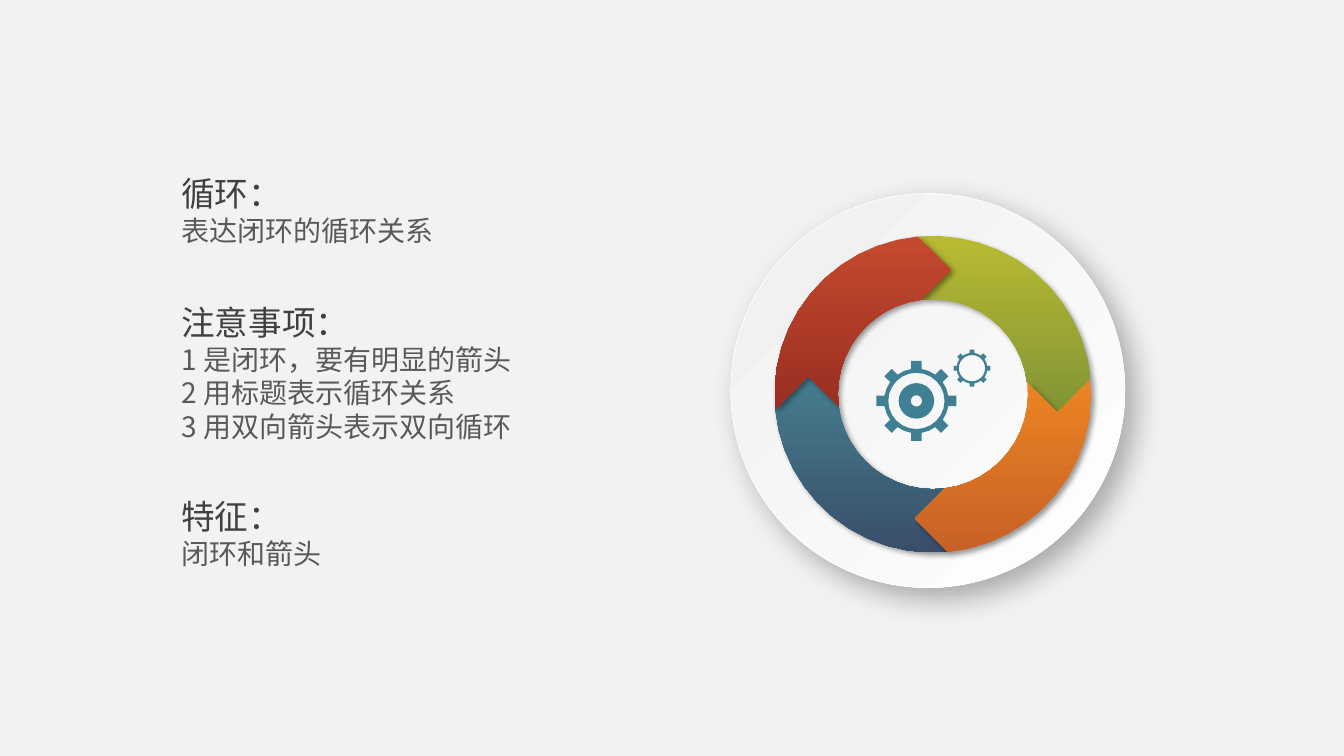
import math
from dataclasses import dataclass
from typing import Optional

import pptx
import pptx.dml.color
import pptx.enum.shapes
import pptx.enum.text
import pptx.oxml
import pptx.oxml.ns
import pptx.util
from lxml import etree

Point = tuple[float, float]


@dataclass(frozen=True)
class Theme:
    font: str = "Noto Sans CJK SC"
    background: str = "F2F2F2"
    heading_color: str = "404040"
    body_color: str = "595959"
    heading_size: float = 24
    body_size: float = 20
    line_ratio: float = 1.2
    gear: str = "3F8094"
    disc: tuple[str, str] = ("EFEFEF", "FFFFFF")
    disc_line: str = "FFFFFF"


@dataclass(frozen=True)
class Shadow:
    opacity: int
    blur: float
    distance: float


@dataclass(frozen=True)
class Note:
    top: float
    width: float
    height: float
    heading: str
    lines: tuple[str, ...]


@dataclass(frozen=True)
class CycleArrow:
    turn: float
    colors: tuple[str, str]


@dataclass(frozen=True)
class Gear:
    center: Point
    tip_radius: float
    rim_radius: float
    hole_radius: float
    half_tooth: float
    hub_radii: tuple[float, ...] = ()


THEME = Theme()
DISC_SHADOW = Shadow(30, 21, 10)
ARROW_SHADOW = Shadow(40, 4, 3)
NOTE_LEFT = 122.4
DISC_BOX = (522, 138.24, 281.52, 281.52)

# Cycle geometry: each radius is paired with the angle where an arrow begins
CYCLE_CENTER = (666.36, 281.52)
OUTER = (113.1, -5.5)
NOTCH = (89.9, 8.3)
INNER = (67.9, -7.2)

NOTES = (
    Note(120.24, 196.56, 60.48, "循环：", ("表达闭环的循环关系",)),
    Note(212.4, 255.6, 133.2, "注意事项：",
         ("1 是闭环，要有明显的箭头", "2 用标题表示循环关系", "3 用双向箭头表示双向循环")),
    Note(351.36, 115.2, 60.48, "特征：", ("闭环和箭头",)),
)
ARROWS = (
    CycleArrow(90, ("457D8E", "394E6B")),
    CycleArrow(270, ("B8BA31", "829436")),
    CycleArrow(0, ("EB8422", "C86126")),
    CycleArrow(180, ("C44A2F", "9A2E22")),
)
GEARS = (
    Gear((654.6, 286.4), 28.8, 23.1, 20.1, 3.7, (12.7, 4)),
    Gear((694.3, 263), 13.3, 11, 9.4, 1.7),
)


def color(value: str) -> pptx.dml.color.RGBColor:
    return pptx.dml.color.RGBColor.from_string(value)


def apply_format(target, values: dict) -> None:
    for name, value in values.items():
        setattr(target, name, value)


def fill_gradient(shape, colors: tuple[str, str], clockwise_angle: float) -> None:
    shape.fill.gradient()
    shape.fill.gradient_angle = 360 - clockwise_angle
    for stop, value in zip(shape.fill.gradient_stops, colors):
        stop.color.rgb = color(value)


def set_shadow(shape, shadow: Optional[Shadow]) -> None:
    shape.shadow.inherit = False
    if shadow is None:
        return
    qn = pptx.oxml.ns.qn
    effects = shape._element.spPr.find(qn("a:effectLst"))
    outer = etree.SubElement(effects, qn("a:outerShdw"), {
        "blurRad": str(pptx.util.Pt(shadow.blur)), "dist": str(pptx.util.Pt(shadow.distance)),
        "dir": str(45 * 60000), "algn": "tl", "rotWithShape": "0"})
    black = etree.SubElement(outer, qn("a:srgbClr"), val="000000")
    etree.SubElement(black, qn("a:alpha"), val=str(shadow.opacity * 1000))


def polar(center: Point, radius: float, degrees: float) -> Point:
    angle = math.radians(degrees)
    return center[0] + radius * math.cos(angle), center[1] + radius * math.sin(angle)


def arc(center: Point, radius: float, start: float, end: float, steps: int) -> list[Point]:
    return [polar(center, radius, start + (end - start) * step / steps) for step in range(steps + 1)]


def draw_outline(slide, contours: list[list[Point]]):
    """Build one borderless freeform from closed contours."""
    scaled = [[(pptx.util.Pt(x), pptx.util.Pt(y)) for x, y in contour] for contour in contours]
    builder = slide.shapes.build_freeform(*scaled[0][0])
    for index, contour in enumerate(scaled):
        if index:
            builder.move_to(*contour[0])
        builder.add_line_segments(contour[1:], close=True)
    shape = builder.convert_to_shape()
    shape.line.fill.background()
    return shape


def draw_disc(slide) -> None:
    disc = slide.shapes.add_shape(pptx.enum.shapes.MSO_SHAPE.OVAL, *map(pptx.util.Pt, DISC_BOX))
    fill_gradient(disc, THEME.disc, 45)
    disc.line.color.rgb = color(THEME.disc_line)
    disc.line.width = pptx.util.Pt(0.5)
    set_shadow(disc, DISC_SHADOW)


def draw_arrow(slide, arrow: CycleArrow) -> None:
    def quarter(radius: float, start: float) -> list[Point]:
        begin = arrow.turn + start
        return arc(CYCLE_CENTER, radius, begin, begin + 90, 12)

    notch, tip = (polar(CYCLE_CENTER, NOTCH[0], arrow.turn + NOTCH[1] + turn) for turn in (0, 90))
    shape = draw_outline(slide, [[notch, *quarter(*INNER), tip, *reversed(quarter(*OUTER))]])
    fill_gradient(shape, arrow.colors, 90)
    set_shadow(shape, ARROW_SHADOW)


def gear_contours(gear: Gear) -> list[list[Point]]:
    base = math.degrees(math.asin(gear.half_tooth / gear.rim_radius))
    tip = math.degrees(math.asin(gear.half_tooth / gear.tip_radius))
    rim = []
    for tooth in range(0, 360, 45):
        rim += arc(gear.center, gear.tip_radius, tooth - tip, tooth + tip, 1)
        rim += arc(gear.center, gear.rim_radius, tooth + base, tooth + 45 - base, 2)
    return [rim] + [arc(gear.center, radius, 0, 345, 23)
                    for radius in (gear.hole_radius, *gear.hub_radii)]


def draw_gears(slide) -> None:
    shape = draw_outline(slide, [contour for gear in GEARS for contour in gear_contours(gear)])
    shape.fill.solid()
    shape.fill.fore_color.rgb = color(THEME.gear)
    set_shadow(shape, None)


def draw_note(slide, note: Note) -> None:
    box = slide.shapes.add_textbox(*map(pptx.util.Pt, (NOTE_LEFT, note.top, note.width, note.height)))
    frame = box.text_frame
    apply_format(frame, {"word_wrap": False, "margin_top": pptx.util.Pt(3.2),
                         "auto_size": pptx.enum.text.MSO_AUTO_SIZE.NONE})
    for index, text in enumerate((note.heading, *note.lines)):
        paragraph = frame.add_paragraph() if index else frame.paragraphs[0]
        size = THEME.body_size if index else THEME.heading_size
        paragraph.line_spacing = pptx.util.Pt(size * THEME.line_ratio)
        run = paragraph.add_run()
        run.text = text
        apply_format(run.font, {"name": THEME.font, "size": pptx.util.Pt(size)})
        run.font.color.rgb = color(THEME.body_color if index else THEME.heading_color)
        etree.SubElement(run.font._element, pptx.oxml.ns.qn("a:ea"), typeface=THEME.font)


def main() -> None:
    presentation = pptx.Presentation()
    apply_format(presentation, {"slide_width": pptx.util.Pt(960), "slide_height": pptx.util.Pt(540)})
    slide = presentation.slides.add_slide(presentation.slide_layouts[6])
    slide.background.fill.solid()
    slide.background.fill.fore_color.rgb = color(THEME.background)

    # Cycle diagram
    draw_disc(slide)
    for arrow in ARROWS:
        draw_arrow(slide, arrow)
    draw_gears(slide)

    # Notes
    for note in NOTES:
        draw_note(slide, note)
    presentation.save("out.pptx")


if __name__ == "__main__":
    main()
